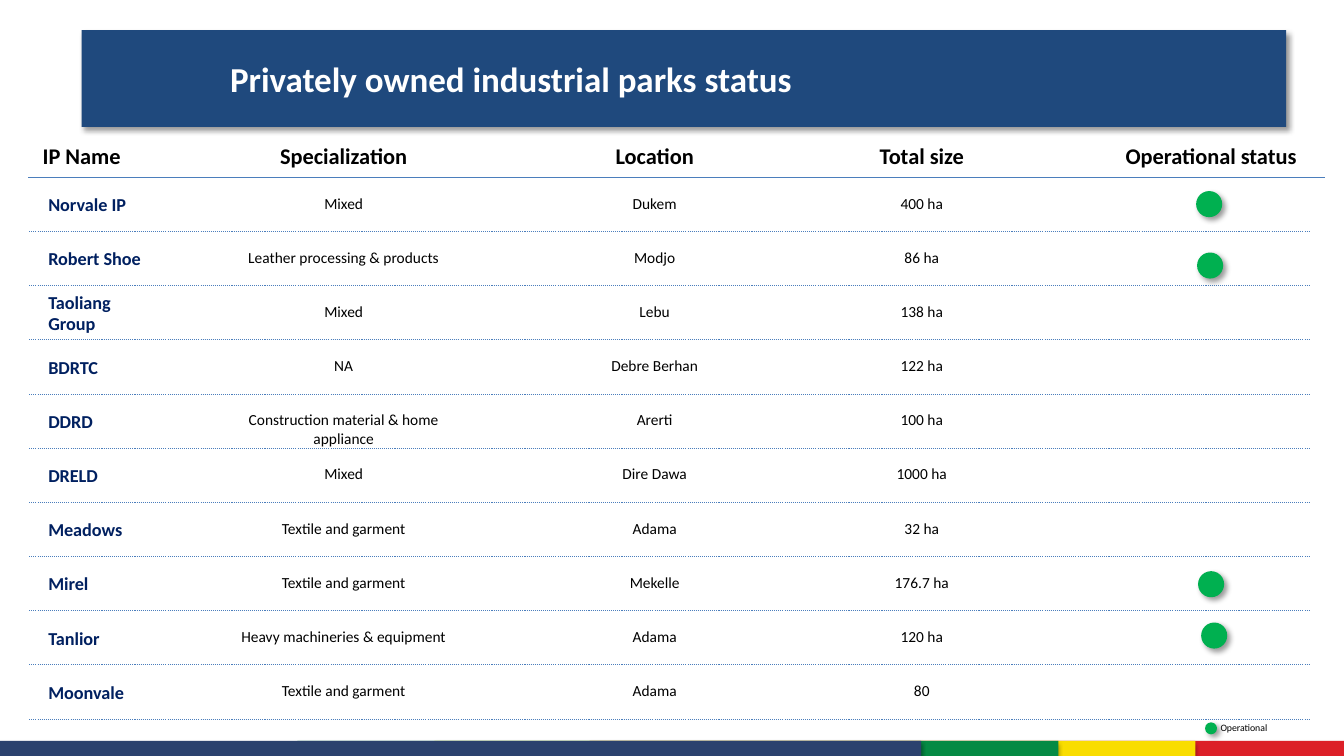
from dataclasses import dataclass
from typing import Optional

from lxml.etree import SubElement
from pptx import Presentation
from pptx.dml.color import RGBColor
from pptx.enum.dml import MSO_LINE
from pptx.enum.shapes import MSO_CONNECTOR, MSO_SHAPE
from pptx.enum.text import MSO_ANCHOR, PP_ALIGN
from pptx.oxml.ns import qn
from pptx.util import Pt

BLACK = RGBColor(0x00, 0x00, 0x00)
WHITE = RGBColor(0xFF, 0xFF, 0xFF)
NAVY = RGBColor(0x00, 0x20, 0x60)
BANNER_BLUE = RGBColor(0x1F, 0x49, 0x7D)
RULE_BLUE = RGBColor(0x4B, 0x7E, 0xBC)
OPERATIONAL_GREEN = RGBColor(0x00, 0xB0, 0x50)
STRIPE_RED = RGBColor(0xDC, 0x20, 0x28)
STRIPE_YELLOW = RGBColor(0xF9, 0xDD, 0x00)
STRIPE_GREEN = RGBColor(0x05, 0x8A, 0x44)
STRIPE_BLUE = RGBColor(0x2B, 0x42, 0x6E)

FONT = "Calibri"
ROW_PITCH = 38.7
NAME_MIDDLE = 146
DETAIL_TOP = 134.8
FIRST_RULE = 165.4
HEADING_TOP = 97.9
DOT_SIZE = 16.6


@dataclass(frozen=True)
class Shadow:
    opacity: int
    blur: float
    distance: float
    angle: int


@dataclass(frozen=True)
class Stripe:
    left: float
    width: float
    color: RGBColor


@dataclass(frozen=True)
class Column:
    heading: str
    left: float
    width: float


@dataclass(frozen=True)
class Park:
    name: str
    specialization: str
    location: str
    size: str
    dot: Optional[tuple[float, float]] = None
    name_height: float = 23


SOFT_SHADOW = Shadow(40, 4, 3, 45)
STRIPE_SHADOW = Shadow(35, 3.1, 1.8, 90)

STRIPES = [
    Stripe(421.2, 543.6, STRIPE_RED),
    Stripe(310.3, 543.6, STRIPE_YELLOW),
    Stripe(212.4, 543.6, STRIPE_GREEN),
    Stripe(0, 658.1, STRIPE_BLUE),
]

DETAIL_COLUMNS = [
    Column("Specialization", 149, 193),
    Column("Location", 402.5, 130.3),
    Column("Total size", 593.3, 130.3),
]
COLUMNS = [
    Column("IP Name", 18.7, 79.2),
    *DETAIL_COLUMNS,
    Column("Operational status", 784.1, 162),
]

PARKS = [
    Park("Norvale IP", "Mixed", "Dukem", "400 ha", (855.4, 137.5)),
    Park("Robert Shoe", "Leather processing & products", "Modjo", "86 ha", (856.1, 181.4)),
    Park("Taoliang Group", "Mixed", "Lebu", "138 ha", name_height=38.9),
    Park("BDRTC", "NA", "Debre Berhan", "122 ha"),
    Park("DDRD", "Construction material & home appliance", "Arerti", "100 ha"),
    Park("DRELD", "Mixed", "Dire Dawa", "1000 ha"),
    Park("Meadows", "Textile and garment", "Adama", "32 ha"),
    Park("Mirel", "Textile and garment", "Mekelle", "176.7 ha", (856.8, 409)),
    Park("Tanlior", "Heavy machineries & equipment", "Adama", "120 ha", (859, 445.7)),
    Park("Moonvale", "Textile and garment", "Adama", "80"),
]


def write(frame, text: str, *, size: float, color: RGBColor = BLACK, bold: bool = False,
          align=PP_ALIGN.LEFT, anchor=MSO_ANCHOR.TOP, wrap: bool = True,
          inset: float = 7.2) -> None:
    frame.word_wrap = wrap
    frame.vertical_anchor = anchor
    frame.margin_left = Pt(inset)
    paragraph = frame.paragraphs[0]
    paragraph.alignment = align
    run = paragraph.add_run()
    run.text = text
    run.font.name = FONT
    run.font.size = Pt(size)
    run.font.bold = bold
    run.font.color.rgb = color


def add_label(slide, text: str, left: float, top: float, width: float, height: float,
              **text_format) -> None:
    label = slide.shapes.add_textbox(Pt(left), Pt(top), Pt(width), Pt(height))
    write(label.text_frame, text, **text_format)


def cast_shadow(shape, shadow: Shadow) -> None:
    shape.shadow.inherit = False
    effects = shape._element.spPr.find(qn("a:effectLst"))
    outer = SubElement(effects, qn("a:outerShdw"), {
        "blurRad": str(Pt(shadow.blur)),
        "dist": str(Pt(shadow.distance)),
        "dir": str(shadow.angle * 60000),
        "algn": "tl",
        "rotWithShape": "0",
    })
    tint = SubElement(outer, qn("a:srgbClr"), val=str(BLACK))
    SubElement(tint, qn("a:alpha"), val=str(shadow.opacity * 1000))


def add_filled(slide, kind, left: float, top: float, width: float, height: float,
               color: RGBColor, shadow: Shadow):
    shape = slide.shapes.add_shape(kind, Pt(left), Pt(top), Pt(width), Pt(height))
    shape.fill.solid()
    shape.fill.fore_color.rgb = color
    shape.line.fill.background()
    cast_shadow(shape, shadow)
    return shape


def add_dot(slide, left: float, top: float, size: float) -> None:
    dot = add_filled(slide, MSO_SHAPE.FLOWCHART_CONNECTOR, left, top, size, size,
                     OPERATIONAL_GREEN, SOFT_SHADOW)
    dot.line.color.rgb = OPERATIONAL_GREEN
    dot.line.width = Pt(2)


def add_rule(slide, left: float, right: float, y: float, dash=None) -> None:
    rule = slide.shapes.add_connector(MSO_CONNECTOR.STRAIGHT, Pt(left), Pt(y), Pt(right), Pt(y))
    rule.line.color.rgb = RULE_BLUE
    rule.line.width = Pt(0.75)
    rule.line.dash_style = dash
    SubElement(rule._element.spPr, qn("a:effectLst"))


def add_park(slide, index: int, park: Park) -> None:
    offset = index * ROW_PITCH
    add_label(slide, park.name, 27.4, NAME_MIDDLE + offset - park.name_height / 2, 91.4,
              park.name_height, size=13, color=NAVY, bold=True, anchor=MSO_ANCHOR.MIDDLE)
    for column, detail in zip(DETAIL_COLUMNS, (park.specialization, park.location, park.size)):
        add_label(slide, detail, column.left, DETAIL_TOP + offset, column.width, 22.3,
                  size=11, align=PP_ALIGN.CENTER)
    add_rule(slide, 20.9, 935.3, FIRST_RULE + offset, MSO_LINE.ROUND_DOT)
    if park.dot:
        add_dot(slide, *park.dot, DOT_SIZE)


def main() -> None:
    deck = Presentation()
    deck.slide_width, deck.slide_height = Pt(960), Pt(540)
    slide = deck.slides.add_slide(deck.slide_layouts[6])

    for stripe in STRIPES:
        add_filled(slide, MSO_SHAPE.RECTANGLE, stripe.left, 529.2, stripe.width, 19.4,
                   stripe.color, STRIPE_SHADOW)

    banner = add_filled(slide, MSO_SHAPE.RECTANGLE, 58.3, 21.6, 860.4, 69.1,
                        BANNER_BLUE, SOFT_SHADOW)
    write(banner.text_frame, "Privately owned industrial parks status", size=25, color=WHITE,
          bold=True, anchor=MSO_ANCHOR.MIDDLE, inset=106)

    for column in COLUMNS:
        add_label(slide, column.heading, column.left, HEADING_TOP, column.width, 27.4,
                  size=16, bold=True, align=PP_ALIGN.CENTER)
    add_rule(slide, 20.2, 946.1, 126.7)

    for index, park in enumerate(PARKS):
        add_park(slide, index, park)

    add_dot(slide, 861.8, 517, 6.5)
    add_label(slide, "Operational", 864.7, 511.9, 49.7, 15.8, size=7, wrap=False)

    deck.save("out.pptx")


if __name__ == "__main__":
    main()
